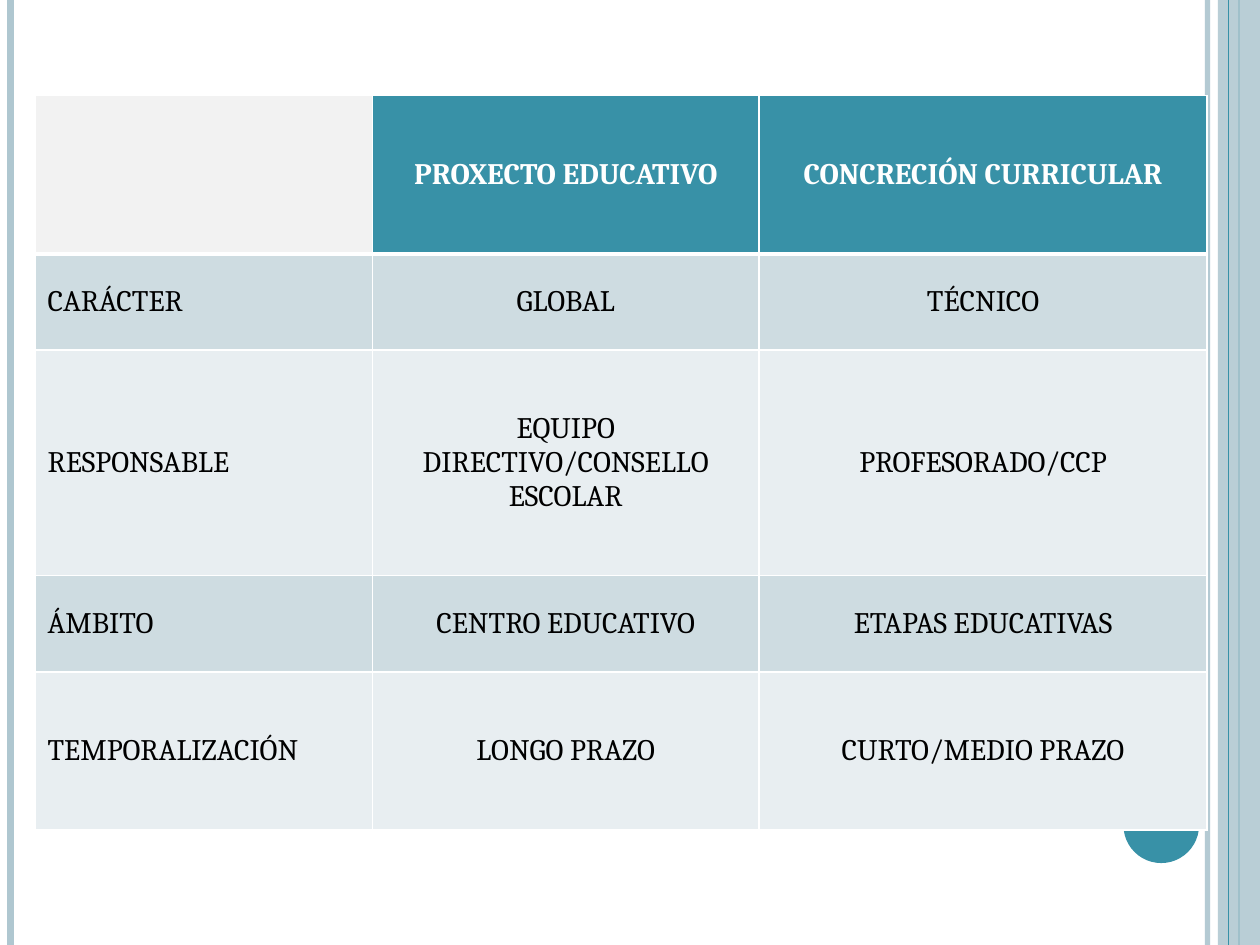
from pptx import Presentation
from pptx.dml.color import RGBColor
from pptx.enum.shapes import MSO_CONNECTOR, MSO_SHAPE
from pptx.enum.text import MSO_ANCHOR, PP_ALIGN
from pptx.oxml import parse_xml
from pptx.oxml.ns import nsdecls, qn
from pptx.util import Pt
from lxml.etree import SubElement

WHITE = RGBColor(0xFF, 0xFF, 0xFF)
BLACK = RGBColor(0, 0, 0)
TEAL = RGBColor(0x38, 0x91, 0xA7)
MIST = RGBColor(0xAF, 0xC7, 0xD0)
GREY = RGBColor(0xF2, 0xF2, 0xF2)
BANDS = [RGBColor(0xE8, 0xEE, 0xF1), RGBColor(0xCE, 0xDC, 0xE1)]

deck = Presentation()
deck.slide_width, deck.slide_height = Pt(720), Pt(540)
slide = deck.slides.add_slide(deck.slide_layouts[6])
shapes = slide.shapes


def fade(shape, share):
    color = shape._element.spPr.find(".//" + qn("a:srgbClr"))
    SubElement(color, qn("a:alpha"), val=str(share * 1000))


def add_rule(x, width, color):
    rule = shapes.add_connector(MSO_CONNECTOR.STRAIGHT, Pt(x), Pt(0), Pt(x), Pt(540))
    rule.line.color.rgb = color
    rule.line.width = Pt(width)
    SubElement(rule._element.spPr, qn("a:effectLst"))
    return rule


fade(add_rule(690, 3, MIST), 93)
add_rule(6, 4.5, MIST)
add_rule(708, 1.5, TEAL)

band = shapes.add_shape(MSO_SHAPE.RECTANGLE, Pt(696), Pt(0), Pt(24), Pt(540))
band.fill.solid()
band.fill.fore_color.rgb = MIST
fade(band, 87)

add_rule(702, 0.75, TEAL)

disc = shapes.add_shape(MSO_SHAPE.OVAL, Pt(642), Pt(450), Pt(43.2), Pt(43.2))
disc.fill.solid()
disc.fill.fore_color.rgb = TEAL
for shape in (band, disc):
    shape.line.fill.background()
    shape.shadow.inherit = False

rows = [
    ("", "PROXECTO EDUCATIVO", "CONCRECIÓN CURRICULAR"),
    ("CARÁCTER", "GLOBAL", "TÉCNICO"),
    ("RESPONSABLE", "EQUIPO DIRECTIVO/CONSELLO ESCOLAR", "PROFESORADO/CCP"),
    ("ÁMBITO", "CENTRO EDUCATIVO", "ETAPAS EDUCATIVAS"),
    ("TEMPORALIZACIÓN", "LONGO PRAZO", "CURTO/MEDIO PRAZO"),
]
widths = [192.8, 221, 256]
heights = [90.4, 55, 128.8, 55, 90.4]

table = shapes.add_table(
    len(rows), len(widths), Pt(20), Pt(54.7), Pt(sum(widths)), Pt(sum(heights))
).table
for col, width in zip(table.columns, widths):
    col.width = Pt(width)
for row, height in zip(table.rows, heights):
    row.height = Pt(height)

for r, row in enumerate(rows):
    for c, text in enumerate(row):
        cell = table.cell(r, c)
        cell.text = text
        cell.vertical_anchor = MSO_ANCHOR.MIDDLE
        cell.fill.solid()
        if r:
            cell.fill.fore_color.rgb = BANDS[r % 2]
        else:
            cell.fill.fore_color.rgb = TEAL if c else GREY
        para = cell.text_frame.paragraphs[0]
        para.alignment = PP_ALIGN.CENTER if c else PP_ALIGN.LEFT
        para.font.name = "Cambria"
        para.font.size = Pt(17)
        para.font.bold = r == 0
        para.font.color.rgb = BLACK if r else WHITE
        props = cell._tc.get_or_add_tcPr()
        for i, side in enumerate("LRTB"):
            thick = (r, side) in ((0, "B"), (1, "T"))
            props.insert(i, parse_xml(
                f'<a:ln{side} {nsdecls("a")} w="{Pt(3 if thick else 1)}">'
                f'<a:solidFill><a:srgbClr val="{WHITE}"/></a:solidFill></a:ln{side}>'
            ))

deck.save("out.pptx")
